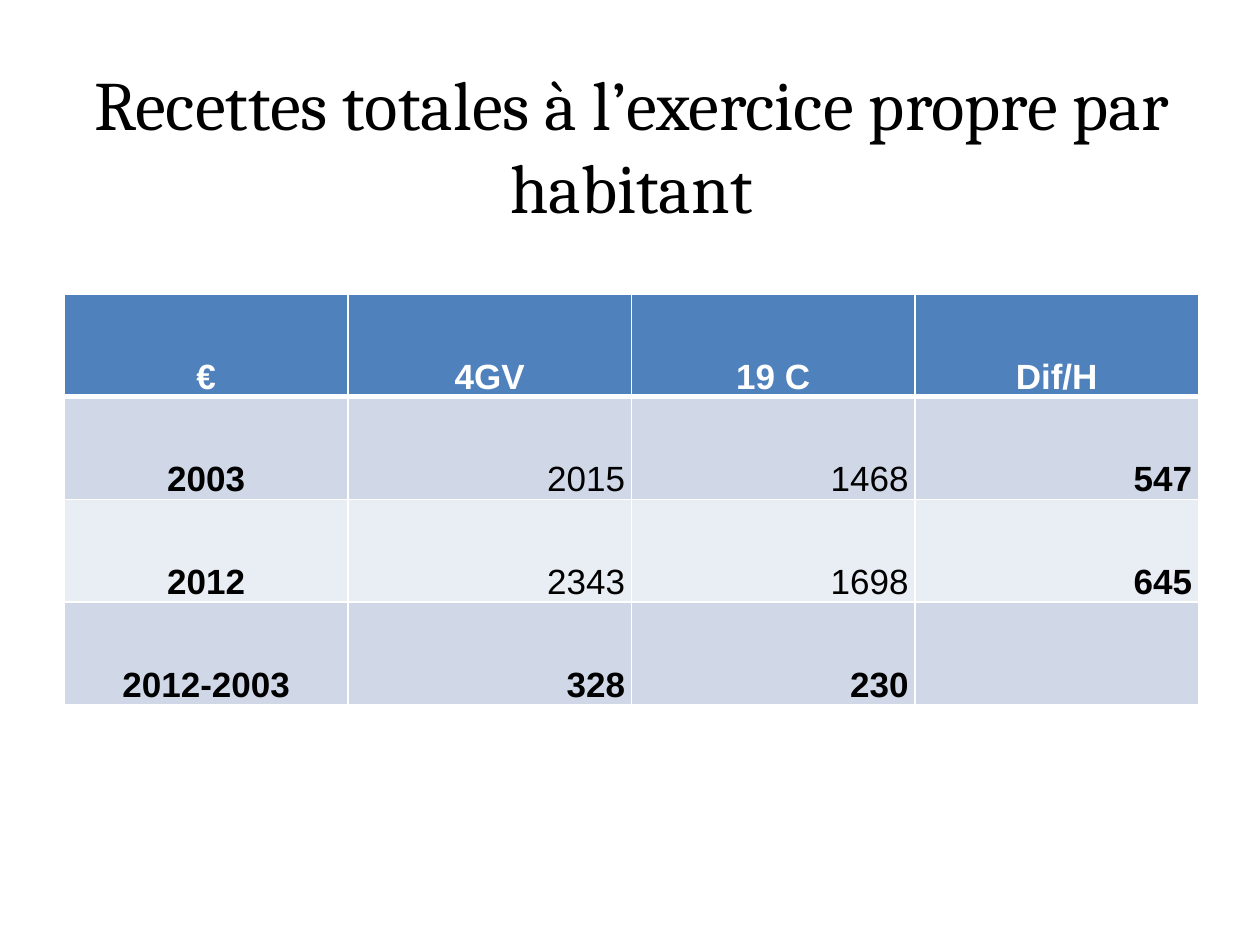
import pptx
import pptx.util
import pptx.dml.color
import pptx.enum.text
import pptx.oxml

Pt = pptx.util.Pt
Align = pptx.enum.text.PP_ALIGN
Anchor = pptx.enum.text.MSO_ANCHOR

HUES = {"head": "4F81BD", "odd": "D0D8E8", "even": "E9EDF4",
        "white": "FFFFFF", "black": "000000"}
ROWS = [
    ["€", "4GV", "19 C", "Dif/H"],
    ["2003", "2015", "1468", "547"],
    ["2012", "2343", "1698", "645"],
    ["2012-2003", "328", "230", ""],
]
LEFT, WIDTH = 36.85, 648
NS = "http://schemas.openxmlformats.org/drawingml/2006/main"


def color(name):
    return pptx.dml.color.RGBColor.from_string(HUES[name])


class Page:
    def __init__(self, slide):
        self.slide = slide

    def font(self, par, face, size, hue, bold=False):
        for run in par.runs:
            run.font.name = face
            run.font.size = Pt(size)
            run.font.bold = bold
            run.font.color.rgb = color(hue)

    def title(self, text, top, height):
        box = self.slide.shapes.title
        box.left, box.top = Pt(LEFT), Pt(top)
        box.width, box.height = Pt(WIDTH), Pt(height)
        frame = box.text_frame
        frame.text = text
        frame.word_wrap = True
        frame.auto_size = pptx.enum.text.MSO_AUTO_SIZE.NONE
        frame.vertical_anchor = Anchor.MIDDLE
        frame.paragraphs[0].alignment = Align.CENTER
        self.font(frame.paragraphs[0], "Cambria", 39.6, "black")

    def border(self, cell, base):
        props = cell._tc.get_or_add_tcPr()
        # Lines must come before the fill in the cell properties
        for spot, side in enumerate("LRTB"):
            width = Pt(base if side == "B" else 1)
            props.insert(spot, pptx.oxml.parse_xml(
                f'<a:ln{side} xmlns:a="{NS}" w="{width}"><a:solidFill>'
                f'<a:srgbClr val="{HUES["white"]}"/></a:solidFill></a:ln{side}>'))

    def cell(self, cell, text, fill, hue, bold, align, base):
        cell.fill.solid()
        cell.fill.fore_color.rgb = color(fill)
        cell.margin_left = cell.margin_right = Pt(3.6)
        cell.margin_top = cell.margin_bottom = 0
        cell.vertical_anchor = Anchor.BOTTOM
        par = cell.text_frame.paragraphs[0]
        par.text = text
        par.alignment = align
        par.line_spacing = 1.15
        self.font(par, "Arial", 20, hue, bold)
        self.border(cell, base)

    def table(self, rows, top, step):
        count, wide = len(rows), len(rows[0])
        table = self.slide.shapes.add_table(
            count, wide, Pt(LEFT), Pt(top), Pt(WIDTH), Pt(step * count)).table
        for col in table.columns:
            col.width = Pt(WIDTH / wide)
        for r, row in enumerate(rows):
            table.rows[r].height = Pt(step)
            head = r == 0
            fill = "head" if head else "odd" if r % 2 else "even"
            for c, text in enumerate(row):
                # Only the yearly figures in the middle are plain
                plain = 0 < r < count - 1 and 0 < c < wide - 1
                align = Align.CENTER if head or c == 0 else Align.RIGHT
                self.cell(table.cell(r, c), text, fill,
                          "white" if head else "black", not plain, align,
                          3 if head else 1)


def main():
    deck = pptx.Presentation()
    deck.slide_width, deck.slide_height = Pt(720), Pt(540)
    page = Page(deck.slides.add_slide(deck.slide_layouts[5]))

    # Title
    page.title("Recettes totales à l’exercice propre par habitant", 37.5, 90)

    # Revenue per inhabitant
    page.table(ROWS, 168, 58.65)

    deck.save("out.pptx")


if __name__ == "__main__":
    main()
